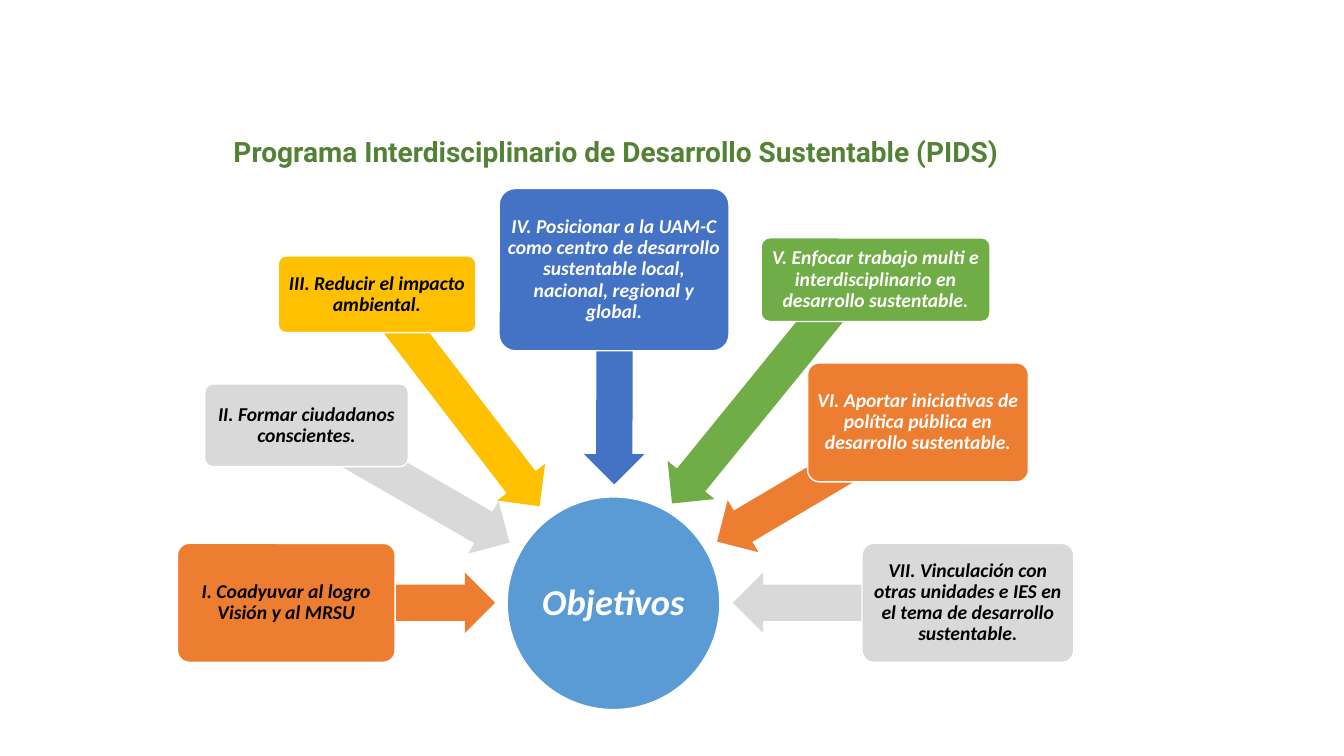
from dataclasses import dataclass

from pptx import Presentation
from pptx.dml.color import RGBColor
from pptx.enum.shapes import MSO_SHAPE
from pptx.enum.text import MSO_ANCHOR, MSO_AUTO_SIZE, PP_ALIGN
from pptx.util import Inches, Pt


@dataclass(frozen=True)
class Theme:
    """Colours, fonts and type sizes of the slide."""
    title_green: str = "548235"
    hub_blue: str = "5B9BD5"
    orange: str = "ED7D31"
    gray: str = "D9D9D9"
    yellow: str = "FFC000"
    blue: str = "4472C4"
    green: str = "70AD47"
    white: str = "FFFFFF"
    black: str = "000000"
    title_font: str = "Roboto"
    body_font: str = "Calibri"
    title_size: int = 20
    hub_size: int = 26
    goal_size: int = 14


THEME = Theme()
ARROW_HEIGHT = 0.6

# Each goal: text, fill, text colour, box (left, top, width, height),
# arrow (left, top, length, rotation)
GOALS = [
    ("I. Coadyuvar al logro Visión y al MRSU", THEME.orange, THEME.black,
     (1.76, 5.39, 2.16, 1.18), (2.84, 5.68, 2.07, 180)),
    ("II. Formar ciudadanos conscientes.", THEME.gray, THEME.black,
     (2.03, 3.81, 2.02, 0.82), (2.88, 4.5, 2.33, 210)),
    ("III. Reducir el impacto ambiental.", THEME.yellow, THEME.black,
     (2.76, 2.54, 1.96, 0.76), (3.22, 3.67, 2.65, 232.5)),
    ("IV. Posicionar a la UAM-C como centro de desarrollo sustentable local, "
     "nacional, regional y global.", THEME.blue, THEME.white,
     (4.95, 1.87, 2.28, 1.61), (5.03, 3.44, 2.13, 270.2)),
    ("V. Enfocar trabajo multi e interdisciplinario en desarrollo sustentable.",
     THEME.green, THEME.white,
     (7.55, 2.36, 2.27, 0.83), (6.13, 3.57, 2.9, 309.1)),
    ("VI. Aportar iniciativas de política pública en desarrollo sustentable.",
     THEME.orange, THEME.white,
     (8.01, 3.6, 2.19, 1.18), (6.95, 4.48, 2.33, 329.4)),
    ("VII. Vinculación con otras unidades e IES en el tema de desarrollo "
     "sustentable.", THEME.gray, THEME.black,
     (8.55, 5.39, 2.1, 1.18), (7.27, 5.68, 2.33, 0)),
]


def add_filled_shape(slide, preset, bounds, fill):
    """Add a flat preset shape without a shadow."""
    shape = slide.shapes.add_shape(preset, *map(Inches, bounds))
    shape.shadow.inherit = False
    shape.fill.solid()
    shape.fill.fore_color.rgb = RGBColor.from_string(fill)
    return shape


def write_text(frame, text, font_name, size, color, italic, spacing):
    """Write one bold, centred paragraph."""
    frame.text = text
    frame.word_wrap = True
    paragraph = frame.paragraphs[0]
    paragraph.alignment = PP_ALIGN.CENTER
    paragraph.line_spacing = spacing
    font = paragraph.runs[0].font
    font.name = font_name
    font.size = Pt(size)
    font.bold = True
    font.italic = italic
    font.color.rgb = RGBColor.from_string(color)


def add_label(slide, preset, bounds, fill, text, size, color, margin):
    """Add a white-edged shape with centred text."""
    label = add_filled_shape(slide, preset, bounds, fill)
    label.line.color.rgb = RGBColor.from_string(THEME.white)
    label.line.width = Pt(1)
    frame = label.text_frame
    frame.margin_left = frame.margin_right = Inches(margin)
    frame.margin_top = frame.margin_bottom = Inches(margin)
    frame.vertical_anchor = MSO_ANCHOR.MIDDLE
    write_text(frame, text, THEME.body_font, size, color, True, 0.9)
    return label


def add_arrow(slide, left, top, length, rotation, fill):
    """Add a block arrow that points at the hub."""
    bounds = (left, top, length, ARROW_HEIGHT)
    arrow = add_filled_shape(slide, MSO_SHAPE.LEFT_ARROW, bounds, fill)
    arrow.line.fill.background()
    arrow.adjustments[0] = 0.6
    arrow.adjustments[1] = 0.5
    arrow.rotation = rotation


def add_goal(slide, text, fill, color, box, arrow):
    """Add a goal box on top of its arrow."""
    add_arrow(slide, *arrow, fill)
    goal = add_label(slide, MSO_SHAPE.ROUNDED_RECTANGLE, box, fill, text,
                     THEME.goal_size, color, 0.03)
    goal.adjustments[0] = 0.1


def format_title(slide, text):
    """Place and format the title placeholder."""
    title = slide.shapes.title
    title.left, title.top = Inches(0.56), Inches(1.28)
    title.width, title.height = Inches(11.1), Inches(0.44)
    frame = title.text_frame
    frame.auto_size = MSO_AUTO_SIZE.NONE
    frame.vertical_anchor = MSO_ANCHOR.TOP
    write_text(frame, text, THEME.title_font, THEME.title_size,
               THEME.title_green, False, 1.0)


def main():
    """Build the slide and save it."""
    presentation = Presentation()
    presentation.slide_width = Inches(13.33)
    presentation.slide_height = Inches(7.5)
    slide = presentation.slides.add_slide(presentation.slide_layouts[5])
    format_title(slide, "Programa Interdisciplinario de Desarrollo Sustentable (PIDS)")
    add_label(slide, MSO_SHAPE.OVAL, (5.03, 4.93, 2.11, 2.11), THEME.hub_blue,
              "Objetivos", THEME.hub_size, THEME.white, 0.02)
    for goal in GOALS:
        add_goal(slide, *goal)
    presentation.save("out.pptx")


if __name__ == "__main__":
    main()
